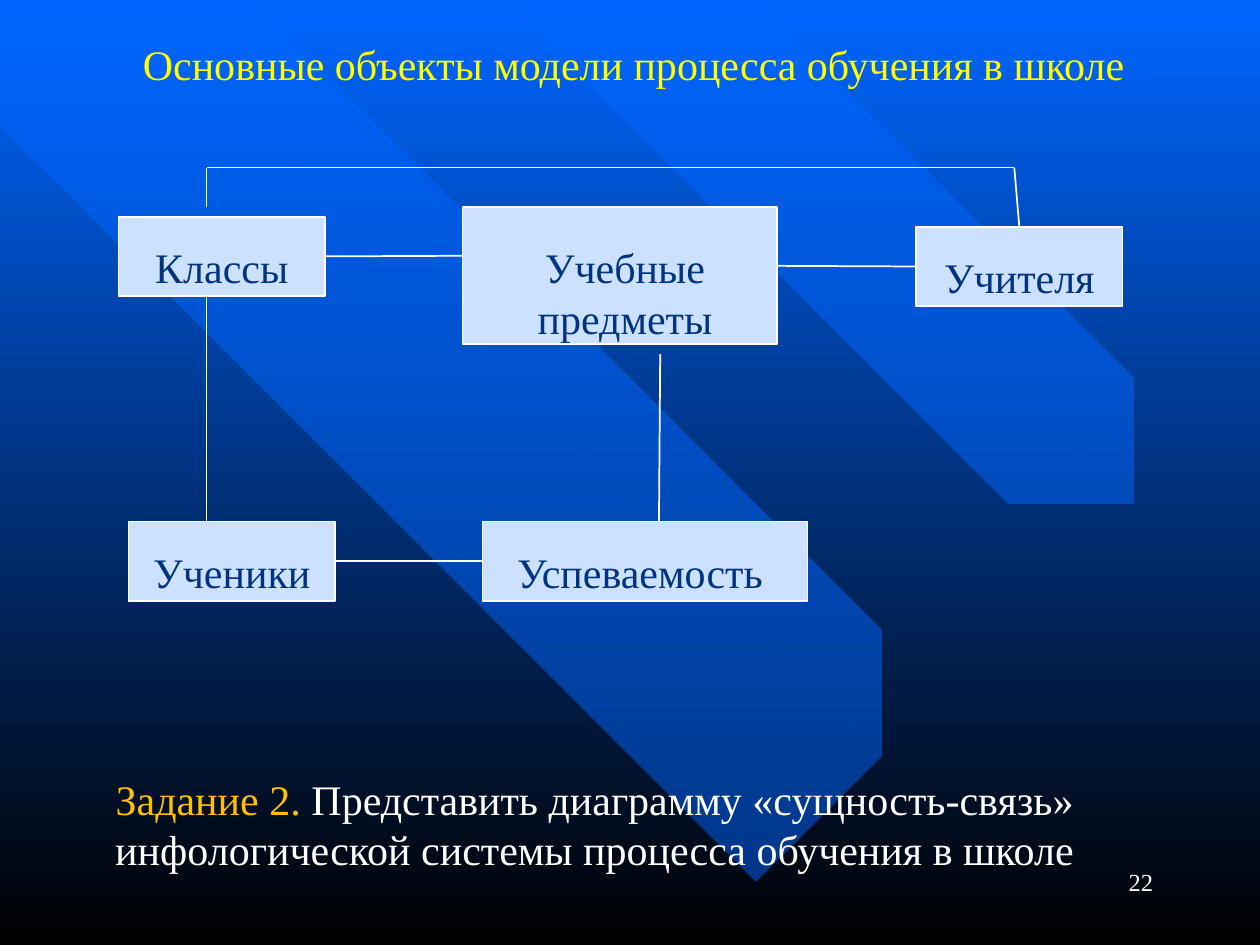
from dataclasses import dataclass
from typing import Optional

from lxml import etree
from pptx import Presentation
from pptx.dml.color import RGBColor
from pptx.enum.shapes import MSO_CONNECTOR, MSO_SHAPE
from pptx.enum.text import MSO_ANCHOR, MSO_AUTO_SIZE, PP_ALIGN
from pptx.oxml.ns import qn
from pptx.util import Inches, Pt

RECT = MSO_SHAPE.RECTANGLE
STRAIGHT = MSO_CONNECTOR.STRAIGHT
CENTER, RIGHT = PP_ALIGN.CENTER, PP_ALIGN.RIGHT
TOP_SIDE, LEFT_SIDE, RIGHT_SIDE = 0, 1, 3

FONT = "Times New Roman"
BLUE, BLACK, WHITE = "0066FF", "000000", "FFFFFF"
YELLOW, ORANGE = "FFFF00", "FFC000"
BOX_FILL, BOX_TEXT = "CCE0FF", "003380"
LABEL_INDENT = 0.08


@dataclass
class Entity:
    name: str
    x: float
    y: float
    w: float = 1.64
    h: float = 0.63
    label_dy: float = 0.15
    label_w: float = 1.48
    label_h: float = 0.5


@dataclass
class Link:
    start: tuple[float, float]
    end: tuple[float, float]
    start_joint: Optional[tuple[str, int]] = None
    end_joint: Optional[tuple[str, int]] = None


STRIPES = [
    [(6.7, 5.93), (0.79, 0), (0, 0), (0, 0.84), (5.89, 6.75)],
    [(2.14, 0), (7.38, 5.27), (7.06, 5.59), (1.49, 0)],
    [(4.89, 0), (8.76, 3.89), (8.21, 4.44), (3.8, 0)],
    [(5.3, 0), (8.97, 3.68), (9.27, 3.38), (5.91, 0)],
]

ENTITIES = [
    Entity("Классы", 0.94, 1.72),
    Entity("Учебные предметы", 3.67, 1.64, 2.5, 1.09, 0.23, 2.42, 0.91),
    Entity("Учителя", 7.27, 1.8),
    Entity("Ученики", 1.02, 4.14),
    Entity("Успеваемость", 3.83, 4.14, w=2.58, label_w=2.34),
]

LINKS = [
    Link((1.64, 1.33), (8.05, 1.33)),
    Link((1.64, 1.33), (1.64, 1.64)),
    Link((8.05, 1.33), (8.09, 1.8), end_joint=("Учителя", TOP_SIDE)),
    Link((1.64, 2.34), (1.64, 4.14)),
    Link((2.66, 4.45), (3.83, 4.45),
         ("Ученики", RIGHT_SIDE), ("Успеваемость", LEFT_SIDE)),
    Link((2.58, 2.03), (3.67, 2.03), start_joint=("Классы", RIGHT_SIDE)),
    Link((6.17, 2.11), (7.27, 2.11), end_joint=("Учителя", LEFT_SIDE)),
    Link((5.24, 2.81), (5.23, 4.14)),
]


def rgb(color: str) -> RGBColor:
    return RGBColor.from_string(color)


def add_run(p, text: str, color: str, size: float = 24) -> None:
    r = p.add_run()
    r.text = text
    r.font.name = FONT
    r.font.size = Pt(size)
    r.font.color.rgb = rgb(color)


def add_text(s, x: float, y: float, w: float, h: float,
             runs: list[tuple[str, str]], size: float = 24, align=CENTER) -> None:
    tf = s.shapes.add_textbox(Inches(x), Inches(y), Inches(w), Inches(h)).text_frame
    tf.word_wrap = True
    p = tf.paragraphs[0]
    p.alignment = align
    for text, color in runs:
        add_run(p, text, color, size)


def set_background(s) -> None:
    fill = s.background.fill
    fill.gradient()
    fill.gradient_angle = 270
    for stop, color in zip(fill.gradient_stops, (BLUE, BLACK)):
        stop.color.rgb = rgb(color)


def add_stripe(s, points: list[tuple[float, float]]) -> None:
    """Draw a half-transparent diagonal band."""
    builder = s.shapes.build_freeform(*points[0], scale=Inches(1))
    builder.add_line_segments(points[1:], close=True)
    sp = builder.convert_to_shape()
    sp.shadow.inherit = False
    sp.fill.solid()
    sp.fill.fore_color.rgb = rgb(BLUE)
    sp.line.fill.background()
    color = sp.element.spPr.find(qn("a:solidFill")).find(qn("a:srgbClr"))
    etree.SubElement(color, qn("a:alpha"), val="50000")


def set_title(s, text: str) -> None:
    title = s.shapes.title
    s.shapes.element.append(title.element)  # in front of the stripes
    title.left, title.top = Inches(0.78), Inches(-0.16)
    title.width, title.height = Inches(8.5), Inches(1.33)
    tf = title.text_frame
    tf.auto_size = MSO_AUTO_SIZE.NONE
    tf.word_wrap = True
    tf.vertical_anchor = MSO_ANCHOR.MIDDLE
    tf.margin_left = tf.margin_right = tf.margin_top = tf.margin_bottom = 0
    p = tf.paragraphs[0]
    p.alignment = CENTER
    add_run(p, text, YELLOW)


def add_entity(s, e: Entity):
    sp = s.shapes.add_shape(RECT, Inches(e.x), Inches(e.y), Inches(e.w), Inches(e.h))
    sp.shadow.inherit = False
    sp.fill.solid()
    sp.fill.fore_color.rgb = rgb(BOX_FILL)
    sp.line.color.rgb = rgb(WHITE)
    sp.line.width = Pt(1)
    add_text(s, e.x + LABEL_INDENT, e.y + e.label_dy, e.label_w, e.label_h,
             [(e.name, BOX_TEXT)])
    return sp


def add_link(s, link: Link, boxes: dict) -> None:
    ends = [Inches(v) for v in (*link.start, *link.end)]
    line = s.shapes.add_connector(STRAIGHT, *ends)
    line.line.color.rgb = rgb(WHITE)
    line.line.width = Pt(1)
    etree.SubElement(line.element.spPr, qn("a:effectLst"))
    if link.start_joint:
        name, side = link.start_joint
        line.begin_connect(boxes[name], side)
    if link.end_joint:
        name, side = link.end_joint
        line.end_connect(boxes[name], side)


def main() -> None:
    prs = Presentation()
    prs.slide_width, prs.slide_height = Inches(10), Inches(7.5)
    s = prs.slides.add_slide(prs.slide_layouts[5])
    set_background(s)
    for points in STRIPES:
        add_stripe(s, points)
    set_title(s, "Основные объекты модели процесса обучения в школе")
    add_text(s, 7.17, 6.83, 2.08, 0.5, [("22", WHITE)], 14, RIGHT)
    boxes = {e.name: add_entity(s, e) for e in ENTITIES}
    for link in LINKS:
        add_link(s, link, boxes)
    add_text(s, 0.62, 6.09, 8.2, 0.91, [
        ("Задание 2. ", ORANGE),
        ("Представить диаграмму «сущность-связь» "
         "инфологической системы процесса обучения в школе", WHITE),
    ])
    prs.save("out.pptx")


if __name__ == "__main__":
    main()
